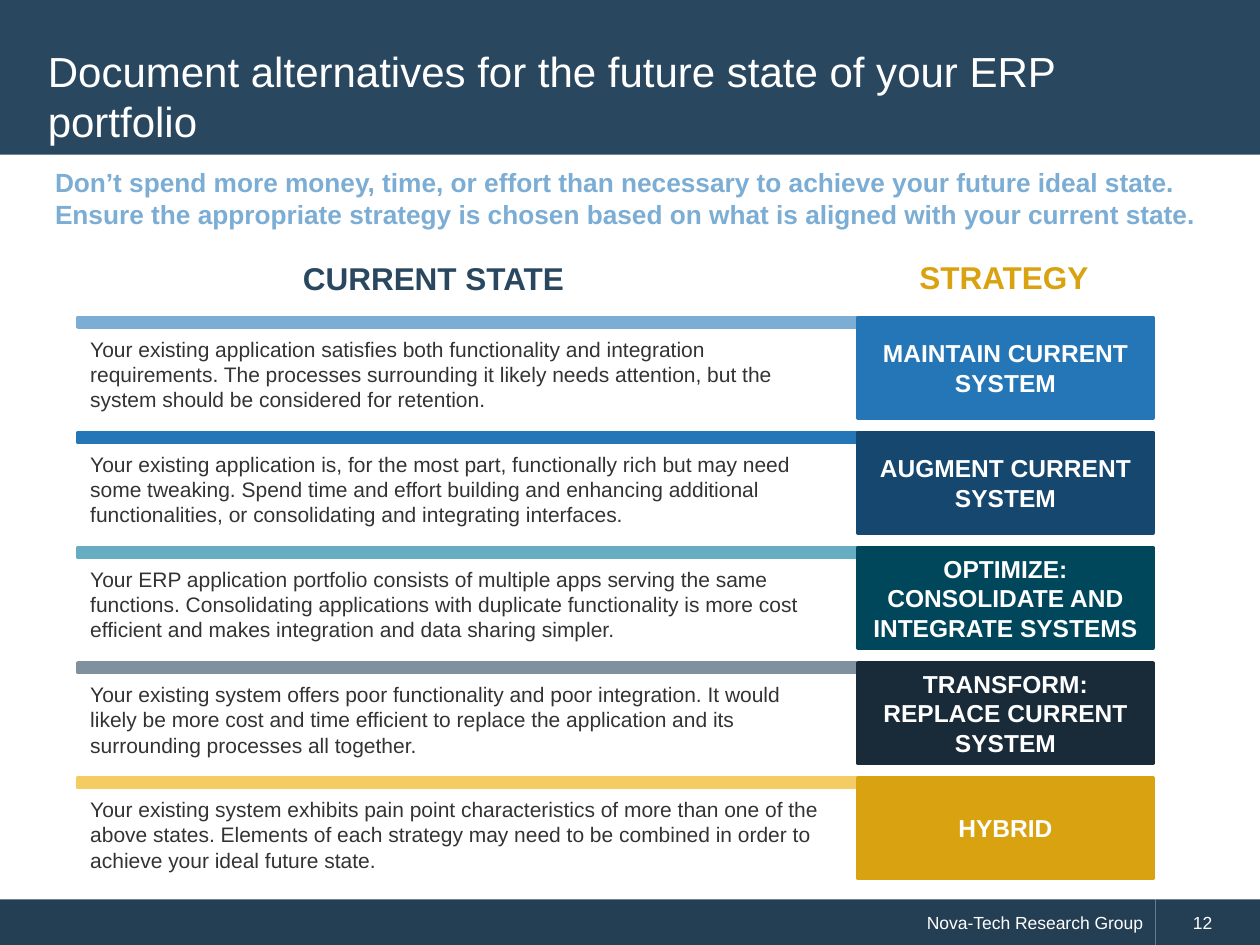
from pptx import Presentation
from pptx.dml.color import RGBColor
from pptx.enum.shapes import MSO_SHAPE
from pptx.enum.text import MSO_ANCHOR, MSO_AUTO_SIZE, PP_ALIGN
from pptx.util import Cm, Pt

RECTANGLE = MSO_SHAPE.RECTANGLE
TOP, MIDDLE = MSO_ANCHOR.TOP, MSO_ANCHOR.MIDDLE
LEFT, CENTER, RIGHT = PP_ALIGN.LEFT, PP_ALIGN.CENTER, PP_ALIGN.RIGHT
NO_AUTOFIT = MSO_AUTO_SIZE.NONE
TITLE_ONLY = 5

WHITE = RGBColor(0xFF, 0xFF, 0xFF)
NAVY = RGBColor(0x29, 0x47, 0x5F)
FOOTER_NAVY = RGBColor(0x24, 0x3F, 0x54)
CHARCOAL = RGBColor(0x33, 0x33, 0x33)
SKY = RGBColor(0x7C, 0xAD, 0xD4)
BLUE = RGBColor(0x25, 0x76, 0xB7)
DEEP_BLUE = RGBColor(0x16, 0x47, 0x6E)
AQUA = RGBColor(0x66, 0xAD, 0xC1)
TEAL = RGBColor(0x00, 0x47, 0x5B)
GREY = RGBColor(0x7F, 0x91, 0x9F)
INK = RGBColor(0x19, 0x2B, 0x39)
SAND = RGBColor(0xF4, 0xCC, 0x64)
GOLD = RGBColor(0xD9, 0xA2, 0x10)

STATE_LEFT, STRATEGY_LEFT = 1.57, 17.3
FIRST_ROW_TOP, ROW_PITCH = 6.4, 2.32

# Bar colour, strategy colour, current state, strategy
ALTERNATIVES = [
    (SKY, BLUE,
     "Your existing application satisfies both functionality and integration "
     "requirements. The processes surrounding it likely needs attention, but "
     "the system should be considered for retention.",
     "MAINTAIN CURRENT SYSTEM"),
    (BLUE, DEEP_BLUE,
     "Your existing application is, for the most part, functionally rich but "
     "may need some tweaking. Spend time and effort building and enhancing "
     "additional functionalities, or consolidating and integrating interfaces.",
     "AUGMENT CURRENT SYSTEM"),
    (AQUA, TEAL,
     "Your ERP application portfolio consists of multiple apps serving the "
     "same functions. Consolidating applications with duplicate functionality "
     "is more cost efficient and makes integration and data sharing simpler.",
     "OPTIMIZE: CONSOLIDATE AND INTEGRATE SYSTEMS"),
    (GREY, INK,
     "Your existing system offers poor functionality and poor integration. It "
     "would likely be more cost and time efficient to replace the application "
     "and its surrounding processes all together.",
     "TRANSFORM: REPLACE CURRENT SYSTEM"),
    (SAND, GOLD,
     "Your existing system exhibits pain point characteristics of more than "
     "one of the above states. Elements of each strategy may need to be "
     "combined in order to achieve your ideal future state.",
     "HYBRID"),
]


def write(shape, text, size, color, bold=False, align=LEFT, anchor=MIDDLE):
    frame = shape.text_frame
    frame.text = text
    frame_format = {"word_wrap": True, "auto_size": NO_AUTOFIT,
                    "vertical_anchor": anchor}
    for name, value in frame_format.items():
        setattr(frame, name, value)
    paragraph = frame.paragraphs[0]
    paragraph.alignment = align
    font = paragraph.runs[0].font
    font_format = {"name": "Arial", "size": Pt(size), "bold": bold}
    for name, value in font_format.items():
        setattr(font, name, value)
    font.color.rgb = color


def add_block(slide, left, top, width, height, color, outlined=False):
    block = slide.shapes.add_shape(
        RECTANGLE, Cm(left), Cm(top), Cm(width), Cm(height))
    block.shadow.inherit = False
    block.fill.solid()
    block.fill.fore_color.rgb = color
    if outlined:
        block.line.color.rgb = color
        block.line.width = Pt(2)
    else:
        block.line.fill.background()
    return block


def add_label(slide, left, top, width, height, text, size, color, align=LEFT):
    label = slide.shapes.add_textbox(
        Cm(left), Cm(top), Cm(width), Cm(height))
    write(label, text, size, color, bold=True, align=align, anchor=TOP)


def add_header(slide, text):
    """Draw the title band and bring the title in front of it."""
    add_block(slide, 0, 0, 25.4, 3.12, NAVY)
    title = slide.shapes.title
    position = {"left": Cm(0.71), "top": Cm(0.71),
                "width": Cm(23.95), "height": Cm(2.44)}
    for name, value in position.items():
        setattr(title, name, value)
    write(title, text, 24, WHITE)
    slide.shapes._spTree.append(title._element)


def add_footer(slide, owner, page):
    owner_block = add_block(slide, 0, 18.13, 23.29, 0.93, FOOTER_NAVY)
    write(owner_block, owner, 10, WHITE, align=RIGHT)
    page_block = add_block(slide, 23.29, 18.13, 2.11, 0.93, FOOTER_NAVY)
    write(page_block, page, 10, WHITE)
    page_block.text_frame.margin_left = Cm(0.76)


def add_alternative(slide, top, bar_color, strategy_color, state, strategy):
    state_block = add_block(
        slide, STATE_LEFT, top + 0.22, 15.21, 1.85, WHITE)
    write(state_block, state, 12, CHARCOAL)
    add_block(slide, STATE_LEFT, top, 15.75, 0.2, bar_color, outlined=True)
    strategy_block = add_block(
        slide, STRATEGY_LEFT, top, 5.94, 2.03, strategy_color, outlined=True)
    write(strategy_block, strategy, 14, WHITE, bold=True, align=CENTER)


def main():
    prs = Presentation()
    prs.slide_width, prs.slide_height = Cm(25.4), Cm(19.05)
    slide = prs.slides.add_slide(prs.slide_layouts[TITLE_ONLY])

    add_header(
        slide, "Document alternatives for the future state of your ERP portfolio")
    add_footer(slide, "Nova-Tech Research Group", "12")
    add_label(
        slide, 0.86, 3.23, 23.62, 1.55,
        "Don’t spend more money, time, or effort than necessary to achieve "
        "your future ideal state. Ensure the appropriate strategy is chosen "
        "based on what is aligned with your current state.", 15, SKY)
    add_label(slide, 1.35, 5.1, 14.78, 1.02, "CURRENT STATE", 18, NAVY, CENTER)
    add_label(slide, 17.32, 5.08, 5.84, 1.02, "STRATEGY", 18, GOLD, CENTER)
    for row, alternative in enumerate(ALTERNATIVES):
        add_alternative(slide, FIRST_ROW_TOP + row * ROW_PITCH, *alternative)

    prs.save("out.pptx")


if __name__ == "__main__":
    main()
